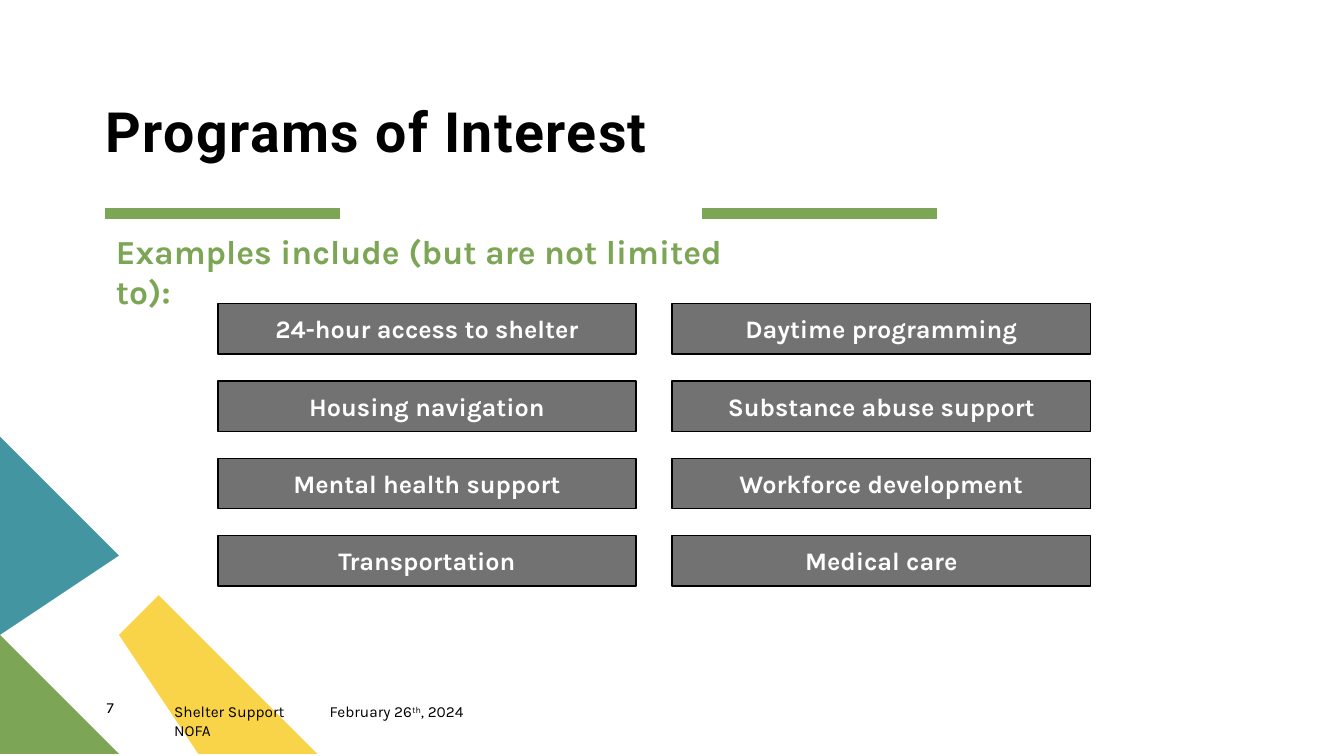
from dataclasses import dataclass

from lxml.etree import SubElement
from pptx import Presentation
from pptx.dml.color import RGBColor
from pptx.enum.shapes import MSO_CONNECTOR, MSO_SHAPE
from pptx.enum.text import MSO_ANCHOR, PP_ALIGN
from pptx.oxml.ns import qn
from pptx.slide import Slide
from pptx.text.text import _Paragraph as Paragraph
from pptx.util import Cm, Pt

BLACK = RGBColor(0x00, 0x00, 0x00)
WHITE = RGBColor(0xFF, 0xFF, 0xFF)
GRAY = RGBColor(0x72, 0x72, 0x72)
GREEN = RGBColor(0x7C, 0xA6, 0x55)
TEAL = RGBColor(0x44, 0x95, 0xA2)
YELLOW = RGBColor(0xF9, 0xD4, 0x48)


@dataclass(frozen=True)
class TextStyle:
    size: float
    color: RGBColor = BLACK
    bold: bool = False
    font: str = "Karla"
    spacing: int = 0  # hundredths of a point


@dataclass(frozen=True)
class TextRun:
    text: str
    baseline: int = 0  # thousandths of a percent


@dataclass(frozen=True)
class Label:
    left: float
    top: float
    width: float
    height: float
    style: TextStyle
    runs: tuple[TextRun, ...]
    inset: bool = False
    anchor: MSO_ANCHOR = MSO_ANCHOR.TOP
    line_spacing: float = 1.0


@dataclass(frozen=True)
class Ornament:
    color: RGBColor
    points: tuple[tuple[float, float], ...]


TITLE_STYLE = TextStyle(39.6, bold=True, font="Roboto", spacing=100)
SUBTITLE_STYLE = TextStyle(24, GREEN, bold=True)
PROGRAM_STYLE = TextStyle(18, WHITE, bold=True)
FOOTER_STYLE = TextStyle(11)

ORNAMENTS = (
    Ornament(YELLOW, ((8.23, 19.05), (5.46, 19.05), (2.69, 16.28), (4.09, 14.91))),
    Ornament(GREEN, ((0, 19.05), (0, 16.36), (2.69, 19.05))),
    Ornament(TEAL, ((0, 10.85), (2.69, 13.54), (0, 16.23))),
)

RULE_LEFTS = (2.64, 17.68)
RULE_TOP = 5.38
RULE_LENGTH = 5.94

LABELS = (
    Label(2.67, 2.44, 13.72, 1.7, TITLE_STYLE, (TextRun("Programs of Interest"),),
          anchor=MSO_ANCHOR.BOTTOM, line_spacing=0.9),
    Label(2.69, 17.58, 1.45, 0.69, FOOTER_STYLE, (TextRun("7"),)),
    Label(4.14, 17.58, 4.17, 0.69, FOOTER_STYLE,
          (TextRun("Shelter Support NOFA"),), inset=True),
    Label(8.31, 17.7, 3.66, 0.48, FOOTER_STYLE,
          (TextRun("February 26"), TextRun("th", 30000), TextRun(", 2024"))),
    Label(2.67, 5.69, 16.13, 1.27, SUBTITLE_STYLE,
          (TextRun("Examples include (but are not limited to):"),), inset=True),
)

PROGRAMS = (
    ("24-hour access to shelter", "Daytime programming"),
    ("Housing navigation", "Substance abuse support"),
    ("Mental health support", "Workforce development"),
    ("Transportation", "Medical care"),
)
GRID_LEFT, GRID_TOP = 5.49, 7.65
COLUMN_PITCH, ROW_PITCH = 11.45, 1.95
BOX_WIDTH, BOX_HEIGHT = 10.54, 1.27


def add_run(paragraph: Paragraph, text_run: TextRun, style: TextStyle) -> None:
    run = paragraph.add_run()
    run.text = text_run.text
    run.font.name = style.font
    run.font.size = Pt(style.size)
    run.font.bold = style.bold
    run.font.color.rgb = style.color
    properties = run._r.get_or_add_rPr()
    if style.spacing:
        properties.set("spc", str(style.spacing))
    if text_run.baseline:
        properties.set("baseline", str(text_run.baseline))


def add_ornament(slide: Slide, ornament: Ornament) -> None:
    start, *others = ornament.points
    builder = slide.shapes.build_freeform(*start, scale=Cm(1))
    builder.add_line_segments(others, close=True)
    shape = builder.convert_to_shape()
    shape.shadow.inherit = False
    shape.fill.solid()
    shape.fill.fore_color.rgb = ornament.color
    shape.line.fill.background()


def add_rule(slide: Slide, left: float) -> None:
    """Draw a thick green horizontal line under the title."""
    connector = slide.shapes.add_connector(
        MSO_CONNECTOR.STRAIGHT,
        Cm(left), Cm(RULE_TOP), Cm(left + RULE_LENGTH), Cm(RULE_TOP),
    )
    connector.line.color.rgb = GREEN
    connector.line.width = Pt(8)
    SubElement(connector._element.spPr, qn("a:effectLst"))


def add_label(slide: Slide, label: Label) -> None:
    text_box = slide.shapes.add_textbox(
        Cm(label.left), Cm(label.top), Cm(label.width), Cm(label.height)
    )
    frame = text_box.text_frame
    frame.word_wrap = True
    frame.vertical_anchor = label.anchor
    if not label.inset:
        frame.margin_left = frame.margin_right = Cm(0)
        frame.margin_top = frame.margin_bottom = Cm(0)
    paragraph = frame.paragraphs[0]
    paragraph.line_spacing = label.line_spacing
    for text_run in label.runs:
        add_run(paragraph, text_run, label.style)


def add_program(slide: Slide, row: int, column: int, name: str) -> None:
    shape = slide.shapes.add_shape(
        MSO_SHAPE.RECTANGLE,
        Cm(GRID_LEFT + column * COLUMN_PITCH), Cm(GRID_TOP + row * ROW_PITCH),
        Cm(BOX_WIDTH), Cm(BOX_HEIGHT),
    )
    shape.shadow.inherit = False
    shape.fill.solid()
    shape.fill.fore_color.rgb = GRAY
    shape.line.color.rgb = BLACK
    shape.line.width = Pt(1)
    shape.text_frame.vertical_anchor = MSO_ANCHOR.MIDDLE
    paragraph = shape.text_frame.paragraphs[0]
    paragraph.alignment = PP_ALIGN.CENTER
    add_run(paragraph, TextRun(name), PROGRAM_STYLE)


def main() -> None:
    presentation = Presentation()
    presentation.slide_width = Cm(33.87)
    presentation.slide_height = Cm(19.05)
    slide = presentation.slides.add_slide(presentation.slide_layouts[6])

    for ornament in ORNAMENTS:
        add_ornament(slide, ornament)
    for left in RULE_LEFTS:
        add_rule(slide, left)
    for label in LABELS:
        add_label(slide, label)
    for row, names in enumerate(PROGRAMS):
        for column, name in enumerate(names):
            add_program(slide, row, column, name)

    presentation.save("out.pptx")


if __name__ == "__main__":
    main()
